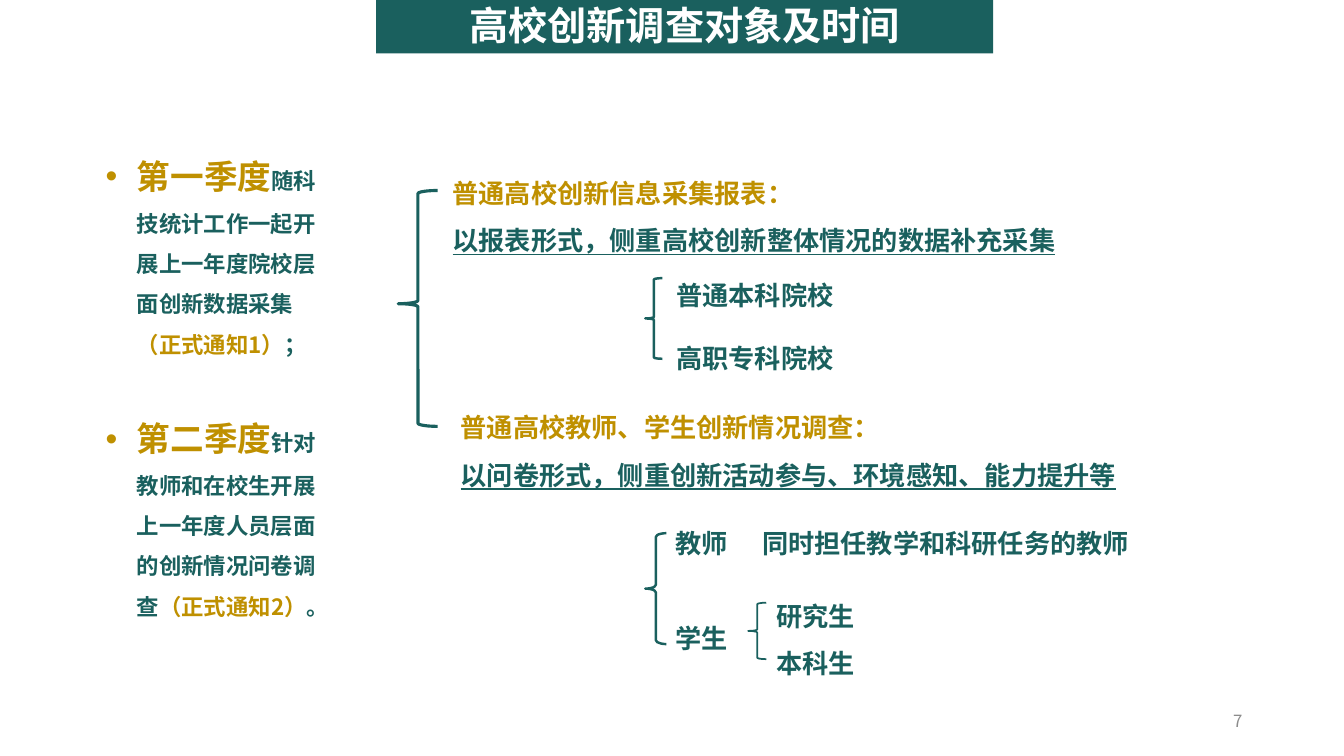
from lxml.etree import SubElement
from pptx import Presentation
from pptx.dml.color import RGBColor
from pptx.enum.shapes import MSO_SHAPE
from pptx.enum.text import MSO_ANCHOR, MSO_AUTO_SIZE, PP_ALIGN
from pptx.oxml.ns import qn
from pptx.util import Inches, Pt

FONT = "Noto Sans CJK SC"
GREEN, GOLD, WHITE, GREY = "1A605E", "BF9000", "FFFFFF", "8C8C8C"

FORMATS = {
    "title": {"size": Pt(28), "bold": True},
    "quarter": {"size": Pt(24), "bold": True},
    "detail": {"size": Pt(16), "bold": True},
    "label": {"size": Pt(18.7), "bold": True},
    "underlined": {"size": Pt(18.7), "bold": True, "underline": True},
    "number": {"size": Pt(12), "bold": False},
}


def color(hex_string):
    return RGBColor.from_string(hex_string)


def add_span(para, text, style, hex_string):
    """Add a run with the same typeface for Latin and East Asian text."""
    span = para.add_run()
    span.text = text
    for name, value in FORMATS[style].items():
        setattr(span.font, name, value)
    span.font.color.rgb = color(hex_string)
    span.font.name = FONT
    SubElement(span._r.get_or_add_rPr(), qn("a:ea"), typeface=FONT)


deck = Presentation()
deck.slide_width, deck.slide_height = Inches(13.33), Inches(7.5)
page = deck.slides.add_slide(deck.slide_layouts[6])

# Title bar
banner = page.shapes.add_shape(
    MSO_SHAPE.RECTANGLE, Inches(3.73), Inches(-0.03), Inches(6.12), Inches(0.56))
banner.shadow.inherit = False
banner.fill.solid()
banner.fill.fore_color.rgb = color(GREEN)
banner.line.fill.background()
banner.text_frame.vertical_anchor = MSO_ANCHOR.MIDDLE
para = banner.text_frame.paragraphs[0]
para.alignment = PP_ALIGN.CENTER
add_span(para, "高校创新调查对象及时间", "title", WHITE)

# Quarterly schedule
quarters = [
    [("第一季度", "quarter", GOLD),
     ("随科技统计工作一起开展上一年度院校层面创新数据采集", "detail", GREEN),
     ("（正式通知1）", "detail", GOLD),
     ("；", "detail", GREEN)],
    [("第二季度", "quarter", GOLD),
     ("针对教师和在校生开展上一年度人员层面的创新情况问卷调查", "detail", GREEN),
     ("（正式通知2）", "detail", GOLD),
     ("。", "detail", GREEN)],
]
schedule = page.shapes.add_textbox(Inches(0.95), Inches(1.3), Inches(2.41), Inches(4.9))
frame = schedule.text_frame
frame.word_wrap = True
for index, spans in enumerate(quarters):
    para = frame.add_paragraph() if index else frame.paragraphs[0]
    para.line_spacing = 1.5
    if index:
        para.space_before = Pt(29)
    properties = para._p.get_or_add_pPr()
    properties.set("marL", str(Inches(0.31)))
    properties.set("indent", str(-Inches(0.31)))
    SubElement(properties, qn("a:buFont"), typeface="Arial")
    SubElement(properties, qn("a:buChar"), char="•")
    for span in spans:
        add_span(para, *span)

# Survey texts: left, top, width, height, line spacing, wrap, alignment, lines
LEFT, CENTER = PP_ALIGN.LEFT, PP_ALIGN.CENTER
surveys = [
    (4.39, 1.55, 7.17, 0.99, 1.5, True, LEFT,
     [("普通高校创新信息采集报表：", "label", GOLD),
      ("以报表形式，侧重高校创新整体情况的数据补充采集", "underlined", GREEN)]),
    (4.47, 3.88, 7.09, 0.99, 1.5, True, LEFT,
     [("普通高校教师、学生创新情况调查：", "label", GOLD),
      ("以问卷形式，侧重创新活动参与、环境感知、能力提升等", "underlined", GREEN)]),
    (6.61, 2.41, 1.77, 1.27, 2.0, False, LEFT,
     [("普通本科院校", "label", GREEN), ("高职专科院校", "label", GREEN)]),
    (6.6, 5.03, 0.72, 0.52, 1.5, False, CENTER, [("教师", "label", GREEN)]),
    (6.6, 5.97, 0.72, 0.52, 1.5, False, CENTER, [("学生", "label", GREEN)]),
    (7.46, 5.03, 3.99, 0.52, 1.5, True, LEFT,
     [("同时担任教学和科研任务的教师", "label", GREEN)]),
    (7.6, 5.75, 1.75, 0.99, 1.5, True, LEFT,
     [("研究生", "label", GREEN), ("本科生", "label", GREEN)]),
]
for *bounds, spacing, wrap, alignment, lines in surveys:
    box = page.shapes.add_textbox(*map(Inches, bounds))
    frame = box.text_frame
    frame.word_wrap = wrap
    frame.auto_size = MSO_AUTO_SIZE.SHAPE_TO_FIT_TEXT
    for index, line in enumerate(lines):
        para = frame.add_paragraph() if index else frame.paragraphs[0]
        para.line_spacing = spacing
        para.alignment = alignment
        add_span(para, *line)

# Braces: left, top, width, height, curve, tip position, line width
braces = [
    (3.95, 1.89, 0.39, 2.34, 0.08, 0.48, 2.25),
    (6.4, 2.76, 0.17, 0.8, 0.08, 0.5, 1.75),
    (6.4, 5.29, 0.21, 1.1, 0.18, 0.5, 1.75),
    (7.42, 5.98, 0.18, 0.56, 0.08, 0.5, 1.25),
]
for *bounds, curve, tip, weight in braces:
    brace = page.shapes.add_shape(MSO_SHAPE.LEFT_BRACE, *map(Inches, bounds))
    brace.shadow.inherit = False
    brace.fill.background()
    brace.line.color.rgb = color(GREEN)
    brace.line.width = Pt(weight)
    brace.adjustments[0], brace.adjustments[1] = curve, tip

# Page number
number = page.shapes.add_textbox(Inches(9.42), Inches(6.95), Inches(3), Inches(0.4))
number.text_frame.word_wrap = True
number.text_frame.vertical_anchor = MSO_ANCHOR.MIDDLE
para = number.text_frame.paragraphs[0]
para.alignment = PP_ALIGN.RIGHT
add_span(para, "7", "number", GREY)

deck.save("out.pptx")
